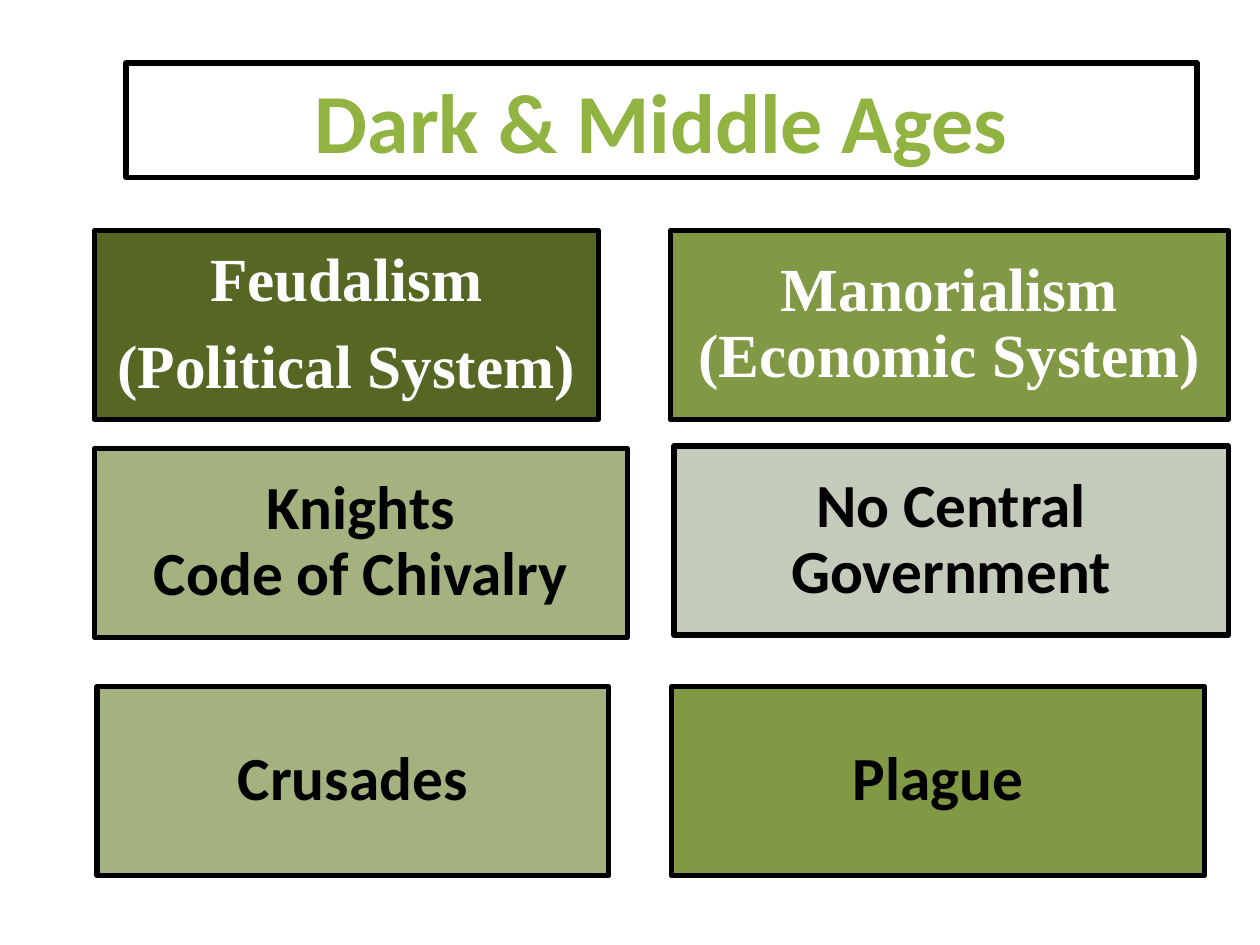
from dataclasses import dataclass

from pptx import Presentation
from pptx.dml.color import RGBColor
from pptx.enum.shapes import MSO_SHAPE
from pptx.enum.text import MSO_ANCHOR, PP_ALIGN
from pptx.slide import Slide
from pptx.util import Inches, Pt

BLACK = RGBColor(0x00, 0x00, 0x00)
WHITE = RGBColor(0xFF, 0xFF, 0xFF)
DARK_OLIVE = RGBColor(0x56, 0x66, 0x23)
OLIVE = RGBColor(0x81, 0x98, 0x45)
SAGE = RGBColor(0xA3, 0xB2, 0x7E)
PALE_SAGE = RGBColor(0xC5, 0xCB, 0xBA)
LIME = RGBColor(0x90, 0xB3, 0x41)

# The slide is a grid of 10 columns and 7.5 rows, one inch each.
COLUMNS, ROWS = 10, 7.5
UNIT = Inches(1)
TOPIC_ROWS = 1.5
SANS, SERIF = "Calibri", "Times New Roman"


@dataclass(frozen=True)
class Box:
    """A framed label placed in grid units; "\\n" in a paragraph breaks the line."""
    col: float
    row: float
    cols: float
    paragraphs: tuple[str, ...]
    fill: RGBColor
    rows: float = TOPIC_ROWS
    color: RGBColor = BLACK
    font: str = SANS
    size: int = 35
    margins: tuple[float, float] = (0.15, 0.15)
    line_spacing: float = 0.9


TOPICS = (
    Box(0.75, 1.83, 4, ("Feudalism", "(Political System)"), DARK_OLIVE,
        color=WHITE, font=SERIF),
    Box(5.32, 1.83, 4.43, ("Manorialism\n(Economic System)",), OLIVE,
        color=WHITE, font=SERIF),
    Box(0.75, 3.56, 4.23, ("Knights\nCode of Chivalry",), SAGE),
    Box(5.35, 3.54, 4.4, ("No Central Government",), PALE_SAGE),
    Box(0.77, 5.45, 4.06, ("Crusades",), SAGE),
    Box(5.33, 5.45, 4.23, ("Plague",), OLIVE),
)
TITLE = Box(1, 0.5, 8.5, ("Dark & Middle Ages",), WHITE, rows=0.91,
            color=LIME, size=48, margins=(0.1, 0.05), line_spacing=1)


def grid(units: float) -> int:
    return round(units * UNIT)


def draw_box(slide: Slide, box: Box) -> None:
    sp = slide.shapes.add_shape(MSO_SHAPE.RECTANGLE, grid(box.col), grid(box.row),
                                grid(box.cols), grid(box.rows))
    sp.shadow.inherit = False
    sp.fill.solid()
    sp.fill.fore_color.rgb = box.fill
    sp.line.color.rgb = BLACK
    sp.line.width = Pt(3)

    tf = sp.text_frame
    tf.word_wrap = True
    tf.vertical_anchor = MSO_ANCHOR.MIDDLE
    tf.margin_left = tf.margin_right = grid(box.margins[0])
    tf.margin_top = tf.margin_bottom = grid(box.margins[1])
    for i, text in enumerate(box.paragraphs):
        p = tf.add_paragraph() if i else tf.paragraphs[0]
        p.alignment = PP_ALIGN.CENTER
        p.line_spacing = box.line_spacing
        if i < len(box.paragraphs) - 1:
            p.space_after = Pt(0.35 * box.size)
        for j, line in enumerate(text.split("\n")):
            if j:
                p.add_line_break()
            r = p.add_run()
            r.text = line
            r.font.name = box.font
            r.font.size = Pt(box.size)
            r.font.bold = True
            r.font.color.rgb = box.color


def main() -> None:
    prs = Presentation()
    prs.slide_width, prs.slide_height = grid(COLUMNS), grid(ROWS)
    slide = prs.slides.add_slide(prs.slide_layouts[6])
    for box in (*TOPICS, TITLE):
        draw_box(slide, box)
    prs.save("out.pptx")


if __name__ == "__main__":
    main()
